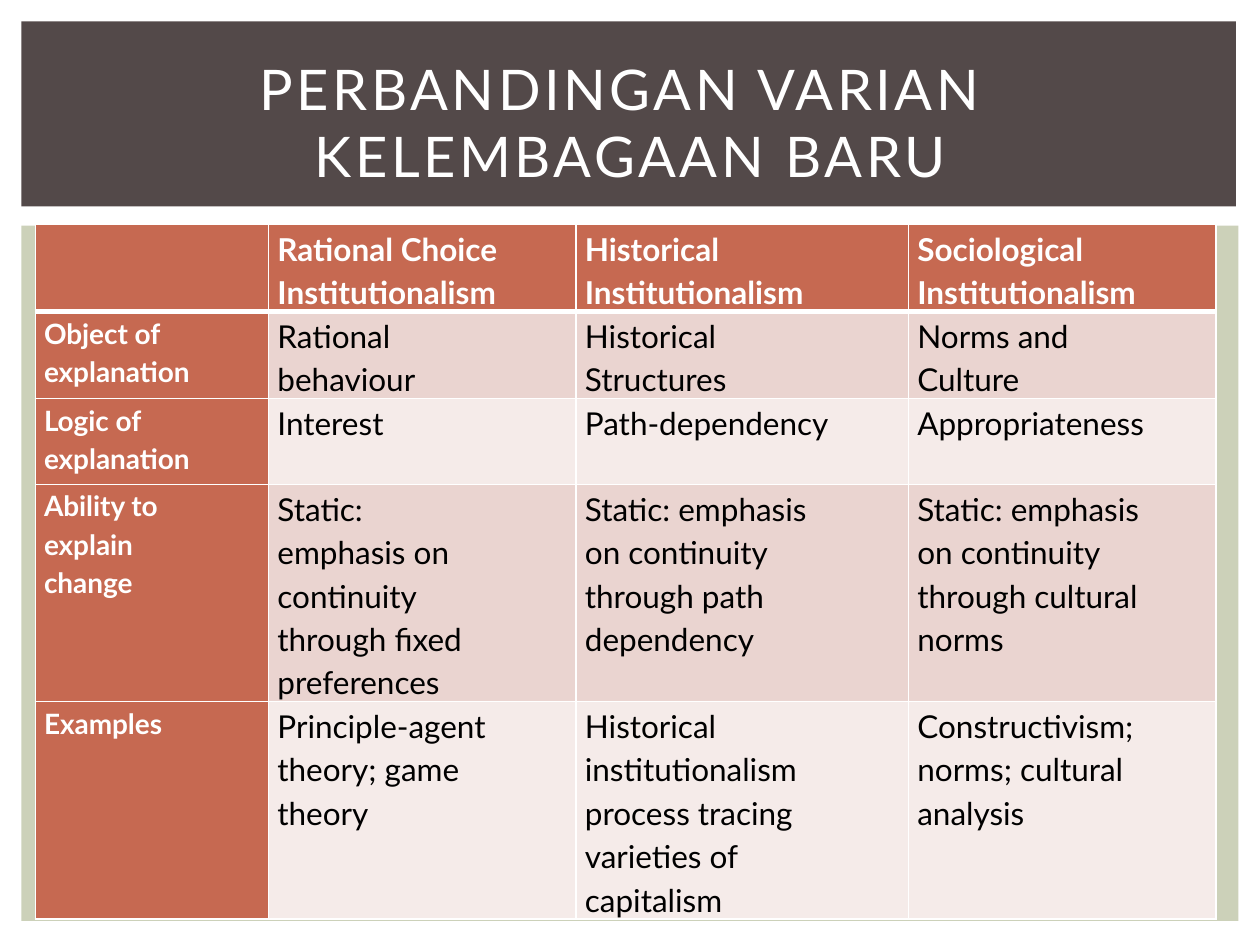
from dataclasses import dataclass

from lxml import etree
from pptx import Presentation
from pptx.dml.color import RGBColor
from pptx.enum.shapes import MSO_SHAPE
from pptx.enum.text import MSO_ANCHOR, MSO_AUTO_SIZE, PP_ALIGN
from pptx.oxml.ns import qn
from pptx.util import Pt

RECTANGLE = MSO_SHAPE.RECTANGLE
MIDDLE, TOP = MSO_ANCHOR.MIDDLE, MSO_ANCHOR.TOP
CENTER, LEFT = PP_ALIGN.CENTER, PP_ALIGN.LEFT
NO_FIT = MSO_AUTO_SIZE.NONE
TITLE_ONLY = 5


@dataclass(frozen=True)
class Theme:
    font: str = "Lato"
    white: str = "FFFFFF"
    black: str = "000000"
    banner: str = "534949"
    backdrop: str = "CCD1B9"
    accent: str = "C66951"
    bands: tuple[str, str] = ("EAD4D0", "F5EBE9")
    title_size: float = 32
    label_size: float = 16
    text_size: float = 18
    line_spacing: float = 1.15
    border: float = 1
    header_border: float = 3


@dataclass(frozen=True)
class Box:
    left: float
    top: float
    width: float
    height: float

    def lengths(self) -> tuple:
        return Pt(self.left), Pt(self.top), Pt(self.width), Pt(self.height)


@dataclass(frozen=True)
class CellStyle:
    fill: str
    color: str
    size: float
    bold: bool


THEME = Theme()
BACKDROP = Box(12.24, 128.9, 695.5, 397.4)
BANNER = Box(12.24, 12.24, 694.1, 105.8)
TITLE = Box(30.24, 28.1, 660.2, 82.8)
TABLE = Box(20.16, 128.4, 674.7, 391.7)
COLUMN_WIDTHS = (133.4, 175.7, 190, 175.6)
ROW_HEIGHTS = (49, 49, 49, 122.4, 122.4)
CELL_MARGIN = 5

# Each line of a cell is a paragraph.
ROWS = (
    ("", "Rational Choice\nInstitutionalism", "Historical\nInstitutionalism",
     "Sociological\nInstitutionalism"),
    ("Object of\nexplanation", "Rational\nbehaviour", "Historical\nStructures",
     "Norms and\nCulture"),
    ("Logic of\nexplanation", "Interest", "Path-dependency", "Appropriateness"),
    ("Ability to\nexplain\nchange",
     "Static:\nemphasis on\ncontinuity\nthrough fixed\npreferences",
     "Static: emphasis\non continuity\nthrough path\ndependency",
     "Static: emphasis\non continuity\nthrough cultural\nnorms"),
    ("Examples", "Principle-agent\ntheory; game\ntheory",
     "Historical institutionalism\nprocess tracing\nvarieties of\ncapitalism",
     "Constructivism;\nnorms; cultural\nanalysis"),
)


def format_font(font, size: float, color: str, bold: bool) -> None:
    font.name = THEME.font
    font.size = Pt(size)
    font.bold = bold
    font.color.rgb = RGBColor.from_string(color)


def add_panel(page, box: Box, color: str) -> None:
    panel = page.shapes.add_shape(RECTANGLE, *box.lengths())
    panel.shadow.inherit = False
    panel.fill.solid()
    panel.fill.fore_color.rgb = RGBColor.from_string(color)
    panel.line.fill.background()


def place_title(page) -> None:
    """Format the title placeholder and bring it in front of the panels."""
    title = page.shapes.title
    title.left, title.top, title.width, title.height = TITLE.lengths()
    frame = title.text_frame
    frame.text = "PERBANDINGAN VARIAN \vKELEMBAGAAN BARU"
    frame.auto_size = NO_FIT
    frame.word_wrap = True
    frame.vertical_anchor = MIDDLE
    para = frame.paragraphs[0]
    para.alignment = CENTER
    for span in para.runs:
        format_font(span.font, THEME.title_size, THEME.white, False)
        span.font._element.set("spc", "200")
    page.shapes._spTree.append(title._element)


def cell_style(row: int, column: int) -> CellStyle:
    if row == 0:
        return CellStyle(THEME.accent, THEME.white, THEME.text_size, True)
    if column == 0:
        return CellStyle(THEME.accent, THEME.white, THEME.label_size, True)
    return CellStyle(THEME.bands[(row - 1) % 2], THEME.black, THEME.text_size, False)


def draw_borders(cell, row: int) -> None:
    """Add white borders; the line under the header row is thicker."""
    thick_side = {0: "lnB", 1: "lnT"}.get(row)
    properties = cell._tc.get_or_add_tcPr()
    for side in ("lnL", "lnR", "lnT", "lnB"):
        width = THEME.header_border if side == thick_side else THEME.border
        line = etree.SubElement(properties, qn(f"a:{side}"), w=str(Pt(width)))
        fill = etree.SubElement(line, qn("a:solidFill"))
        etree.SubElement(fill, qn("a:srgbClr"), val=THEME.white)


def fill_cell(cell, text: str, style: CellStyle) -> None:
    cell.margin_left = cell.margin_right = Pt(CELL_MARGIN)
    cell.margin_top = cell.margin_bottom = Pt(0)
    cell.vertical_anchor = TOP
    cell.fill.solid()
    cell.fill.fore_color.rgb = RGBColor.from_string(style.fill)
    cell.text = text
    for para in cell.text_frame.paragraphs:
        para.alignment = LEFT
        para.line_spacing = THEME.line_spacing
        format_font(para.font, style.size, style.color, style.bold)


def add_comparison(page) -> None:
    table = page.shapes.add_table(len(ROWS), len(COLUMN_WIDTHS), *TABLE.lengths()).table
    for column, width in zip(table.columns, COLUMN_WIDTHS):
        column.width = Pt(width)
    for row, height in zip(table.rows, ROW_HEIGHTS):
        row.height = Pt(height)
    for row, texts in enumerate(ROWS):
        for column, text in enumerate(texts):
            cell = table.cell(row, column)
            draw_borders(cell, row)
            fill_cell(cell, text, cell_style(row, column))


def main() -> None:
    deck = Presentation()
    deck.slide_width, deck.slide_height = Pt(720), Pt(540)
    page = deck.slides.add_slide(deck.slide_layouts[TITLE_ONLY])
    add_panel(page, BACKDROP, THEME.backdrop)
    add_panel(page, BANNER, THEME.banner)
    add_comparison(page)
    place_title(page)
    deck.save("out.pptx")


if __name__ == "__main__":
    main()
